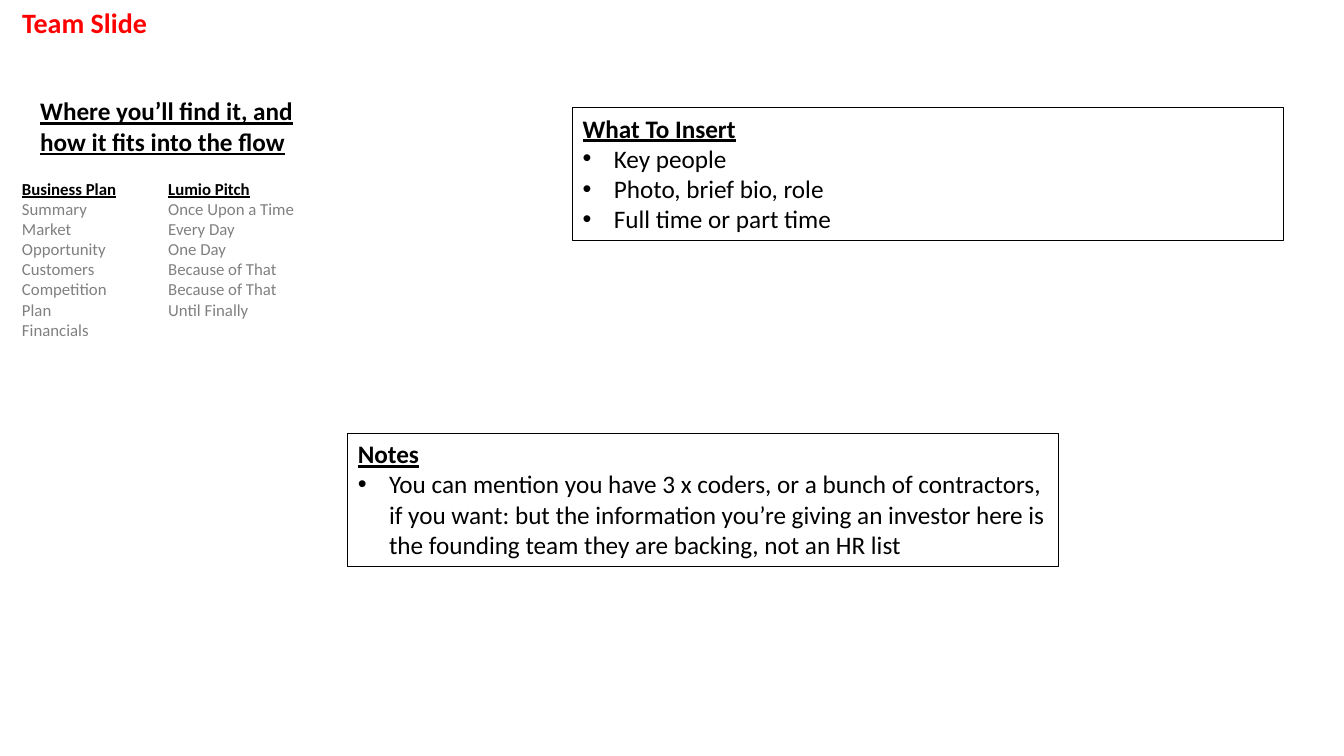
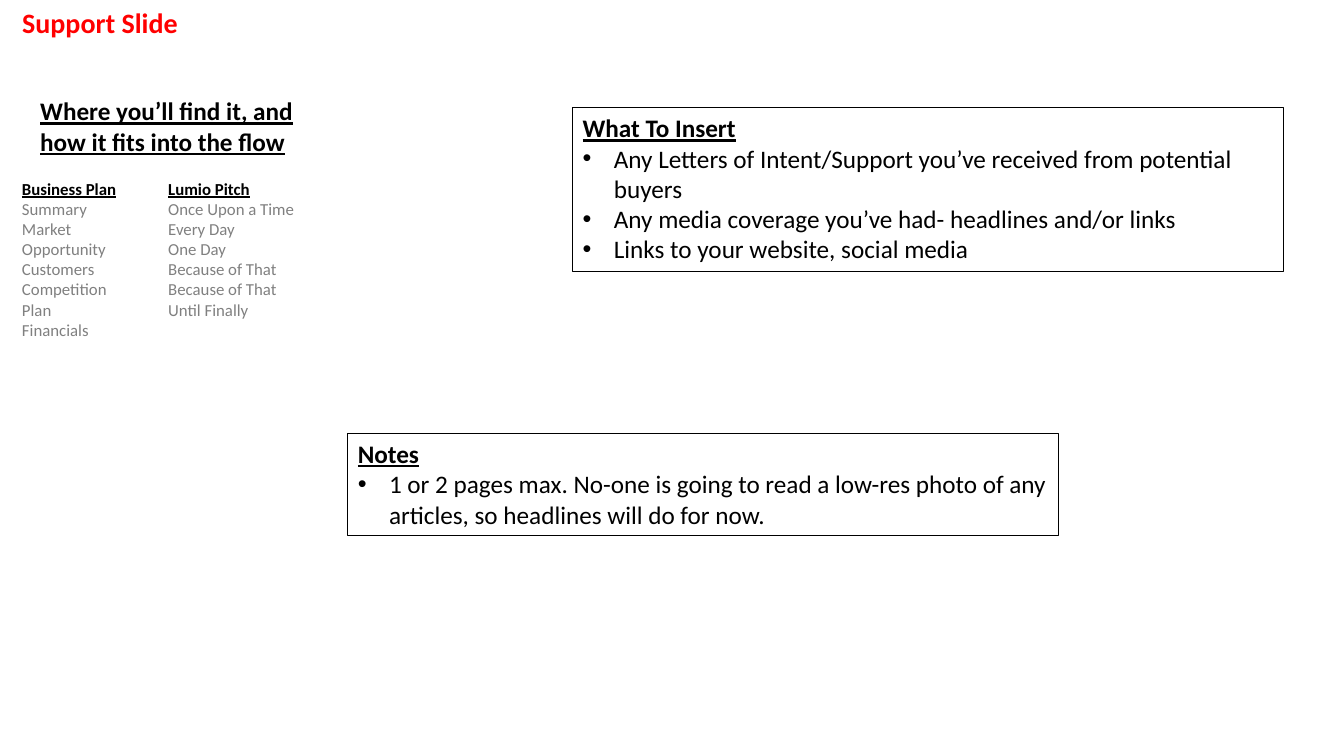
import pptx
import pptx.util
import pptx.dml.color
import pptx.enum.shapes
import pptx.enum.text
import pptx.oxml.ns
from lxml import etree

SLIDES = [
    {
        "title": "Team Slide",
        "insert": (4, ["Key people", "Photo, brief bio, role", "Full time or part time"]),
        "notes": (4, [
            "You can mention you have 3 x coders, or a bunch of contractors, if you want: "
            "but the information you’re giving an investor here is the founding team "
            "they are backing, not an HR list",
        ]),
    },
    {
        "title": "Support Slide",
        "insert": (5, [
            "Any Letters of Intent/Support you’ve received from potential buyers",
            "Any media coverage you’ve had- headlines and/or links",
            "Links to your website, social media",
        ]),
        "notes": (3, [
            "1 or 2 pages max. No-one is going to read a low-res photo of any articles, "
            "so headlines will do for now.",
        ]),
    },
]
FLOW = "Where you’ll find it, and how it fits into the flow"
PLAN = ["Summary", "Market", "Opportunity", "Customers", "Competition", "Plan", "Financials"]
PITCH = ["Once Upon a Time", "Every Day", "One Day", "Because of That", "Because of That",
         "Until Finally"]
LISTS = [("Business Plan", PLAN, 0.12, 1.23), ("Lumio Pitch", PITCH, 1.57, 1.62)]
PANELS = [("What To Insert", "insert", 5.68, 1.07), ("Notes", "notes", 3.45, 4.3)]

THEME = {
    "font": "Calibri", "red": "FF0000", "ink": "000000", "gray": "808080",
    "title": 20, "body": 18, "list": 12, "rule": 0.75,
    "wide": 13.33, "high": 7.5, "panel": 7.05, "list top": 1.72,
    "pad": 0.1, "lead": 1.22, "indent": 0.31,
}


def color(name):
    return pptx.dml.color.RGBColor.from_string(THEME[name])


def place(shape, left, top, width, rows, size):
    high = THEME["pad"] + rows * THEME["lead"] * THEME[size] / 72
    shape.left, shape.top, shape.width, shape.height = map(
        pptx.util.Inches, (left, top, width, high))


def bullet(para):
    props = para._p.get_or_add_pPr()
    step = pptx.util.Inches(THEME["indent"])
    props.set("marL", str(step))
    props.set("indent", str(-step))
    mark = pptx.oxml.ns.qn
    etree.SubElement(props, mark("a:buFont"), typeface="Arial")
    etree.SubElement(props, mark("a:buChar"), char="•")


def write(shape, head, items=(), size="body", ink="ink", tone="ink", under=True, dots=False):
    frame = shape.text_frame
    frame.word_wrap = True
    frame.auto_size = pptx.enum.text.MSO_AUTO_SIZE.SHAPE_TO_FIT_TEXT
    frame.vertical_anchor = pptx.enum.text.MSO_ANCHOR.TOP
    for row, text in enumerate([head, *items]):
        para = frame.add_paragraph() if row else frame.paragraphs[0]
        para.alignment = pptx.enum.text.PP_ALIGN.LEFT
        if row and dots:
            bullet(para)
        run = para.add_run()
        run.text = text
        font = run.font
        font.name = THEME["font"]
        font.size = pptx.util.Pt(THEME[size])
        font.bold = row == 0
        font.underline = under and row == 0
        font.color.rgb = color(tone if row else ink)


def label(slide, left, top, width, rows, head, items=(), size="body", tone="ink"):
    shape = slide.shapes.add_textbox(0, 0, 0, 0)
    write(shape, head, items, size=size, tone=tone)
    place(shape, left, top, width, rows, size)


def panel(slide, left, top, rows, head, items):
    shape = slide.shapes.add_shape(pptx.enum.shapes.MSO_SHAPE.RECTANGLE, 0, 0, 0, 0)
    shape.shadow.inherit = False
    shape.fill.background()
    shape.line.color.rgb = color("ink")
    shape.line.width = pptx.util.Pt(THEME["rule"])
    write(shape, head, items, dots=True)
    place(shape, left, top, THEME["panel"], rows, "body")


def build(deck, data):
    slide = deck.slides.add_slide(deck.slide_layouts[5])
    title = slide.shapes.title
    write(title, data["title"], size="title", ink="red", under=False)
    place(title, 0.12, 0, 2.9, 1, "title")
    label(slide, 0.3, 0.9, 2.72, 2, FLOW)
    for head, items, left, width in LISTS:
        label(slide, left, THEME["list top"], width, len(items) + 1, head, items,
              size="list", tone="gray")
    for head, key, left, top in PANELS:
        rows, items = data[key]
        panel(slide, left, top, rows, head, items)


def main():
    deck = pptx.Presentation()
    deck.slide_width = pptx.util.Inches(THEME["wide"])
    deck.slide_height = pptx.util.Inches(THEME["high"])
    for data in SLIDES:
        build(deck, data)
    deck.save("out.pptx")


if __name__ == "__main__":
    main()
